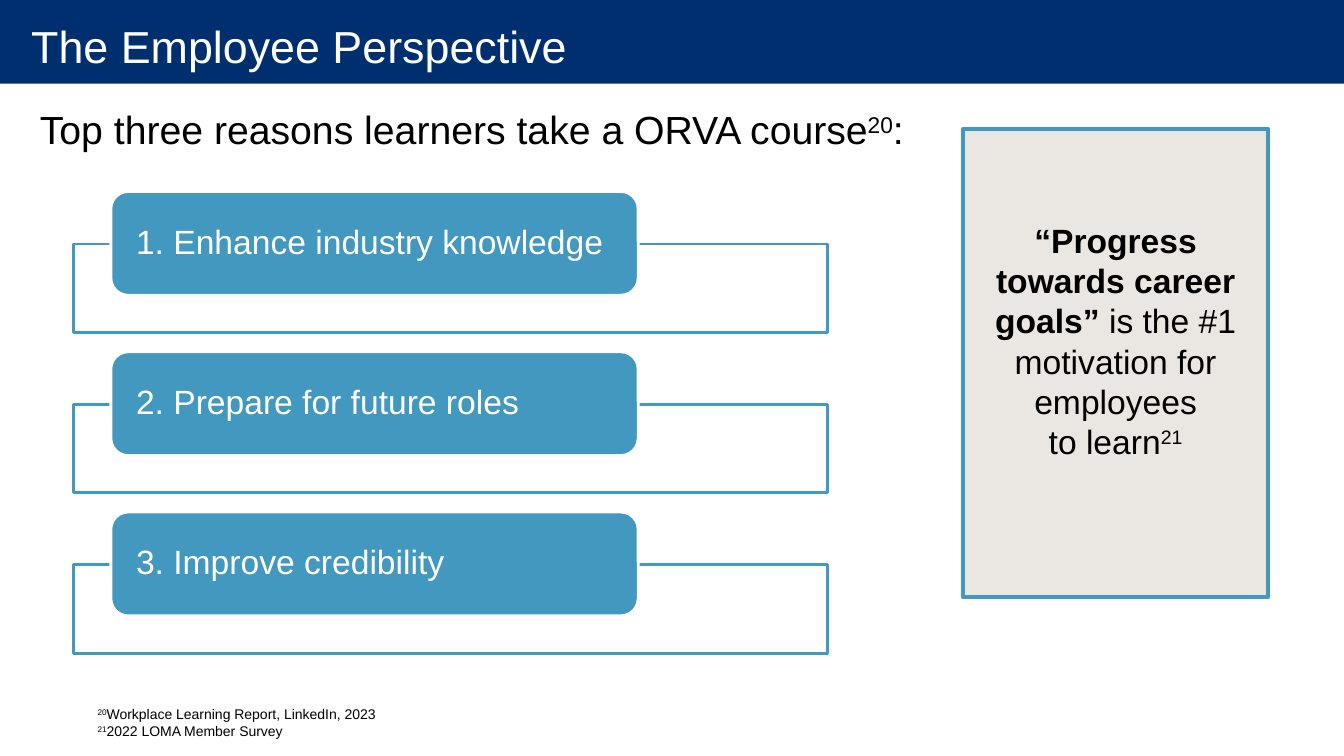
from dataclasses import dataclass

from pptx import Presentation
from pptx.dml.color import RGBColor
from pptx.enum.shapes import MSO_SHAPE
from pptx.enum.text import MSO_ANCHOR, MSO_AUTO_SIZE, PP_ALIGN
from pptx.util import Inches, Pt


@dataclass(frozen=True)
class Theme:
    font: str = "Arial"
    navy: RGBColor = RGBColor(0x00, 0x2F, 0x70)
    blue: RGBColor = RGBColor(0x42, 0x98, 0xBE)
    sand: RGBColor = RGBColor(0xEA, 0xE6, 0xE2)
    white: RGBColor = RGBColor(0xFF, 0xFF, 0xFF)
    black: RGBColor = RGBColor(0x00, 0x00, 0x00)
    title_size: int = 32
    heading_size: int = 28
    body_size: int = 24
    note_size: int = 10


THEME = Theme()
REASONS = [
    "1. Enhance industry knowledge",
    "2. Prepare for future roles",
    "3. Improve credibility",
]
REASON_TOP = 1.9
REASON_STEP = 1.59


def add_run(paragraph, text, size, color, bold=False, superscript=False):
    run = paragraph.add_run()
    run.text = text
    run.font.name = THEME.font
    run.font.size = Pt(size)
    run.font.color.rgb = color
    run.font.bold = bold
    if superscript:
        run.font._element.set("baseline", "30000")


def add_panel(slide, preset, left, top, width, height, fill, line=None, weight=2):
    panel = slide.shapes.add_shape(
        preset, Inches(left), Inches(top), Inches(width), Inches(height)
    )
    panel.shadow.inherit = False
    panel.fill.solid()
    panel.fill.fore_color.rgb = fill
    if line is None:
        panel.line.fill.background()
    else:
        panel.line.color.rgb = line
        panel.line.width = Pt(weight)
    return panel


def add_text(slide, left, top, width, height, lines, size, align=PP_ALIGN.LEFT):
    box = slide.shapes.add_textbox(
        Inches(left), Inches(top), Inches(width), Inches(height)
    )
    frame = box.text_frame
    frame.word_wrap = True
    for index, line in enumerate(lines):
        paragraph = frame.add_paragraph() if index else frame.paragraphs[0]
        paragraph.alignment = align
        for text, style in line:
            add_run(paragraph, text, size, THEME.black, **style)


def set_margins(frame, left, right):
    frame.margin_left, frame.margin_right = Inches(left), Inches(right)
    frame.margin_top = frame.margin_bottom = 0
    frame.vertical_anchor = MSO_ANCHOR.MIDDLE
    frame.word_wrap = True


def add_title(slide, text):
    band = add_panel(slide, MSO_SHAPE.RECTANGLE, 0, 0, 13.33, 0.83, THEME.navy)
    title = slide.shapes.title
    title._element.addprevious(band._element)
    title.left, title.top = Inches(0.01), Inches(-0.03)
    title.width, title.height = Inches(13.32), Inches(0.97)
    frame = title.text_frame
    frame.auto_size = MSO_AUTO_SIZE.NONE
    set_margins(frame, 0.3, 0.2)
    paragraph = frame.paragraphs[0]
    paragraph.alignment = PP_ALIGN.LEFT
    add_run(paragraph, text, THEME.title_size, THEME.white)


def add_reason(slide, top, text):
    add_panel(slide, MSO_SHAPE.RECTANGLE, 0.73, top + 0.52, 7.48, 0.88,
              THEME.white, THEME.blue)
    label = add_panel(slide, MSO_SHAPE.ROUNDED_RECTANGLE, 1.1, top, 5.23, 1.03,
                      THEME.blue, THEME.white)
    set_margins(label.text_frame, 0.2, 0.2)
    paragraph = label.text_frame.paragraphs[0]
    paragraph.alignment = PP_ALIGN.LEFT
    paragraph.line_spacing = 0.9
    add_run(paragraph, text, THEME.body_size, THEME.white)


def main():
    deck = Presentation()
    deck.slide_width, deck.slide_height = Inches(13.33), Inches(7.5)
    slide = deck.slides.add_slide(deck.slide_layouts[5])
    plain, bold, raised = {}, {"bold": True}, {"superscript": True}

    add_title(slide, "The Employee Perspective")
    add_text(slide, 0.87, 6.95, 6.71, 0.44, [
        [("20", raised), ("Workplace Learning Report, LinkedIn, 2023", plain)],
        [("21", raised), ("2022 LOMA Member Survey", plain)],
    ], THEME.note_size)
    add_text(slide, 0.23, 1, 8.9, 0.88, [
        [("Top three reasons learners take a ORVA course", plain),
         ("20", raised), (":", plain)],
    ], THEME.heading_size, PP_ALIGN.CENTER)

    add_panel(slide, MSO_SHAPE.RECTANGLE, 9.55, 1.28, 3.03, 4.64,
              THEME.sand, THEME.blue, 3)
    add_text(slide, 9.55, 2.13, 3.03, 2.52, [
        [("“Progress towards career goals” ", bold),
         ("is the #1 motivation for employees", plain)],
        [("to learn", plain), ("21", raised)],
    ], THEME.body_size, PP_ALIGN.CENTER)

    for index, reason in enumerate(REASONS):
        add_reason(slide, REASON_TOP + index * REASON_STEP, reason)

    deck.save("out.pptx")


if __name__ == "__main__":
    main()
